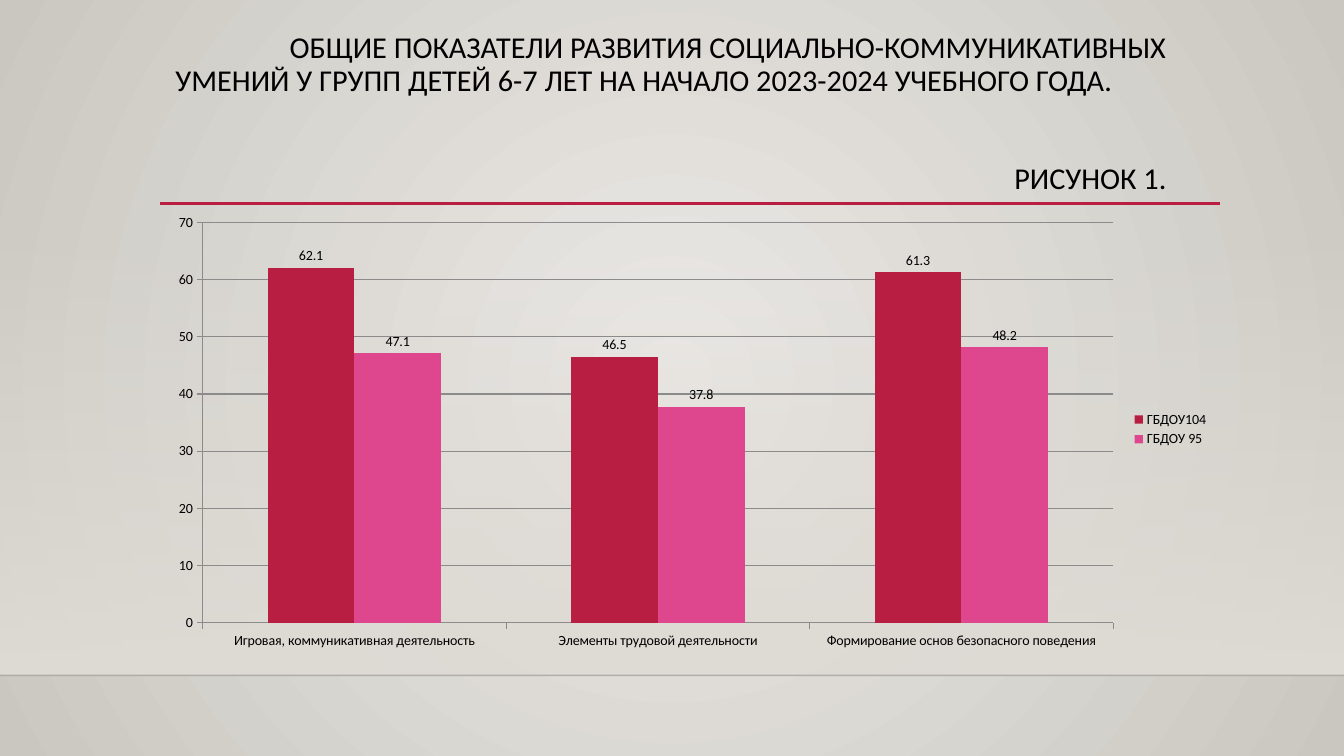
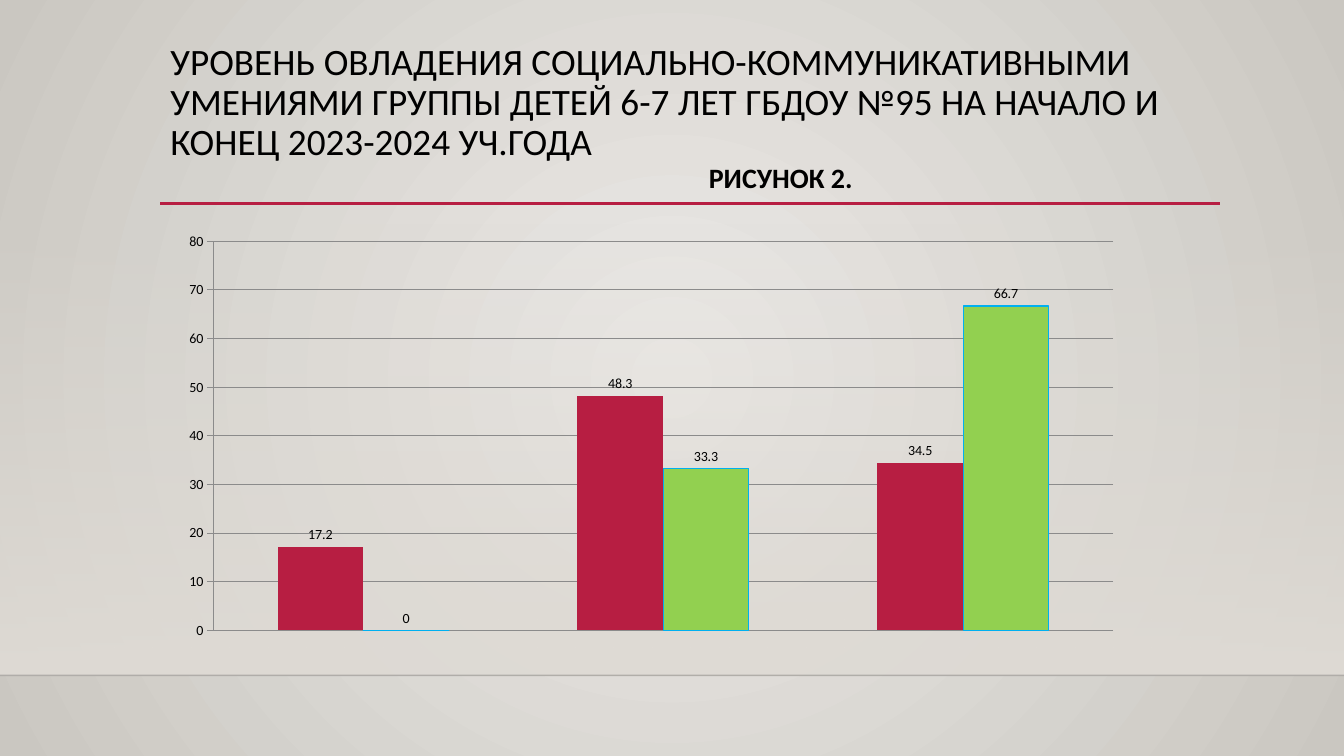
from dataclasses import dataclass
from typing import Optional

from pptx import Presentation
from pptx import util as u
from pptx.chart.data import CategoryChartData
from pptx.dml.color import RGBColor
from pptx.enum import chart as ch
from pptx.enum import shapes, text
from pptx.oxml import parse_xml
from pptx.oxml.ns import nsdecls


@dataclass(frozen=True)
class Theme:
    font: str = "Calibri"
    ink: str = "000000"
    hairline: str = "000001"
    accent: str = "B71E42"
    pink: str = "DE478E"
    green: str = "92D050"
    cyan: str = "00B0F0"
    grid: str = "8B8B8B"
    glow: str = "ECEAE7"
    edge: str = "CAC7C1"
    band: str = "DFDBD5"
    title_size: float = 21.6
    large_title_size: float = 26.6
    caption_size: float = 20
    chart_size: float = 10


@dataclass(frozen=True)
class Box:
    left: float
    top: float
    width: float
    height: float

    def lengths(self) -> tuple:
        return tuple(u.Inches(n) for n in (self.left, self.top, self.width, self.height))


@dataclass(frozen=True)
class TitleLine:
    text: str
    size: float
    align: text.PP_ALIGN = text.PP_ALIGN.LEFT
    indent: float = 0
    space_before: float = 0
    bold: bool = False


@dataclass(frozen=True)
class Series:
    name: str
    values: tuple
    fill: str
    outline: Optional[str] = None


@dataclass(frozen=True)
class ChartSlide:
    title_box: Box
    title: tuple
    chart_box: Box
    plot_area: Box
    categories: tuple
    series: tuple
    value_max: int
    labelled: bool


THEME = Theme()
WIDTH, HEIGHT = 13.33, 7.5
LEFT, CONTENT_WIDTH = 1.59, 10.5
BAND_TOP, BAND_BOTTOM = 2.21, 6.7
RULE_TOP, RULE_RIGHT = 2.02, 12.1

SLIDES = (
    ChartSlide(
        title_box=Box(LEFT, 0.27, 10.08, 1.76),
        title=(
            TitleLine("ОБЩИЕ ПОКАЗАТЕЛИ РАЗВИТИЯ СОЦИАЛЬНО-КОММУНИКАТИВНЫХ",
                      THEME.title_size, text.PP_ALIGN.RIGHT),
            TitleLine("УМЕНИЙ У ГРУПП ДЕТЕЙ 6-7 ЛЕТ НА НАЧАЛО 2023-2024 УЧЕБНОГО ГОДА.",
                      THEME.title_size, indent=0.05),
            TitleLine("РИСУНОК 1.", THEME.title_size, text.PP_ALIGN.RIGHT, space_before=47),
        ),
        chart_box=Box(LEFT, 2.03, CONTENT_WIDTH, 4.46),
        plot_area=Box(0.04, 0.04, 0.86, 0.89),
        categories=("Игровая, коммуникативная деятельность",
                    "Элементы трудовой деятельности",
                    "Формирование основ безопасного поведения"),
        series=(
            Series("ГБДОУ104", (62.1, 46.5, 61.3), THEME.accent),
            Series("ГБДОУ 95", (47.1, 37.8, 48.2), THEME.pink),
        ),
        value_max=70,
        labelled=True,
    ),
    ChartSlide(
        title_box=Box(LEFT, 0.38, CONTENT_WIDTH, 1.65),
        title=(
            TitleLine("УРОВЕНЬ ОВЛАДЕНИЯ СОЦИАЛЬНО-КОММУНИКАТИВНЫМИ УМЕНИЯМИ ГРУППЫ "
                      "ДЕТЕЙ 6-7 ЛЕТ ГБДОУ №95 НА НАЧАЛО И КОНЕЦ 2023-2024 УЧ.ГОДА",
                      THEME.large_title_size),
            TitleLine("РИСУНОК 2.", THEME.caption_size, indent=5.34, bold=True),
        ),
        chart_box=Box(LEFT, 2.17, CONTENT_WIDTH, 4.49),
        plot_area=Box(0.05, 0.05, 0.85, 0.86),
        categories=("1", "2", "3"),
        series=(
            Series("Series 1", (17.2, 48.3, 34.5), THEME.accent),
            Series("Series 2", (0, 33.3, 66.7), THEME.green, THEME.cyan),
        ),
        value_max=80,
        labelled=False,
    ),
)


def color(value: str) -> RGBColor:
    return RGBColor.from_string(value)


def fill_gradient(fill, start: str, end: str) -> None:
    fill.gradient()
    for stop, value in zip(fill.gradient_stops, (start, end)):
        stop.color.rgb = color(value)


def set_alpha(element, percent: int) -> None:
    first = element.xpath(".//a:srgbClr")[0]
    first.append(parse_xml(f'<a:alpha {nsdecls("a")} val="{percent * 1000}"/>'))


def set_background(master) -> None:
    fill_gradient(master.background.fill, THEME.glow, THEME.edge)
    linear = master.element.xpath(".//p:bgPr//a:lin")[0]
    linear.getparent().replace(linear, parse_xml(
        f'<a:path {nsdecls("a")} path="circle">'
        '<a:fillToRect l="50000" t="50000" r="50000" b="50000"/></a:path>'))


def add_rule(page, left: float, right: float, top: float, value: str, weight: float):
    rule = page.shapes.add_connector(
        shapes.MSO_CONNECTOR.STRAIGHT,
        u.Inches(left), u.Inches(top), u.Inches(right), u.Inches(top))
    rule.line.color.rgb = color(value)
    rule.line.width = u.Pt(weight)
    rule.element.spPr.append(parse_xml(f'<a:effectLst {nsdecls("a")}/>'))
    return rule


def add_decor(page) -> None:
    band_box = Box(0, BAND_TOP, WIDTH, BAND_BOTTOM - BAND_TOP)
    band = page.shapes.add_shape(shapes.MSO_SHAPE.RECTANGLE, *band_box.lengths())
    band.shadow.inherit = False
    band.line.fill.background()
    fill_gradient(band.fill, THEME.band, THEME.band)
    band.fill.gradient_angle = 270
    set_alpha(band.element, 0)
    floor = add_rule(page, 0, WIDTH, BAND_BOTTOM, THEME.hairline, 1)
    set_alpha(floor.element, 20)
    add_rule(page, LEFT, RULE_RIGHT, RULE_TOP, THEME.accent, 2.5)


def fill_title(page, box: Box, lines: tuple) -> None:
    title = page.shapes.title
    title.left, title.top, title.width, title.height = box.lengths()
    frame = title.text_frame
    frame.auto_size = text.MSO_AUTO_SIZE.NONE
    frame.vertical_anchor = text.MSO_ANCHOR.TOP
    frame.text = "\n".join(line.text for line in lines)
    for para, line in zip(frame.paragraphs, lines):
        para.alignment = line.align
        para.line_spacing = 0.9
        para.space_before = u.Pt(line.space_before)
        properties = para._p.get_or_add_pPr()
        properties.set("marL", str(u.Inches(line.indent)))
        properties.set("indent", "0")
        for span in para.runs:
            span.font.name = THEME.font
            span.font.size = u.Pt(line.size)
            span.font.bold = line.bold
            span.font.color.rgb = color(THEME.ink)


def set_font(font) -> None:
    font.name = THEME.font
    font.size = u.Pt(THEME.chart_size)
    font.color.rgb = color(THEME.ink)


def set_plot_area(chart, area: Box) -> None:
    plot_area = chart.element.xpath(".//c:plotArea")[0]
    for old in plot_area.xpath("./c:layout"):
        plot_area.remove(old)
    plot_area.insert(0, parse_xml(
        f'<c:layout {nsdecls("c")}><c:manualLayout><c:layoutTarget val="inner"/>'
        '<c:xMode val="edge"/><c:yMode val="edge"/>'
        f'<c:x val="{area.left}"/><c:y val="{area.top}"/>'
        f'<c:w val="{area.width}"/><c:h val="{area.height}"/>'
        '</c:manualLayout></c:layout>'))


def style_axes(chart, value_max: int, labelled: bool) -> None:
    values, categories = chart.value_axis, chart.category_axis
    values.minimum_scale, values.maximum_scale, values.major_unit = 0, value_max, 10
    values.has_major_gridlines = True
    categories.visible = labelled
    for axis in (values, categories):
        axis.major_tick_mark = ch.XL_TICK_MARK.OUTSIDE
        set_font(axis.tick_labels.font)
    for line in (values.format.line, categories.format.line, values.major_gridlines.format.line):
        line.color.rgb = color(THEME.grid)
        line.width = u.Pt(0.75)


def add_column_chart(page, content: ChartSlide) -> None:
    data = CategoryChartData()
    data.categories = content.categories
    for series in content.series:
        data.add_series(series.name, series.values)
    chart = page.shapes.add_chart(
        ch.XL_CHART_TYPE.COLUMN_CLUSTERED, *content.chart_box.lengths(), data).chart
    set_font(chart.font)
    chart.has_title = False
    chart.has_legend = content.labelled
    if content.labelled:
        chart.legend.position = ch.XL_LEGEND_POSITION.RIGHT
        chart.legend.include_in_layout = False
        set_font(chart.legend.font)
    style_axes(chart, content.value_max, content.labelled)
    set_plot_area(chart, content.plot_area)
    plot = chart.plots[0]
    plot.vary_by_categories = False
    plot.gap_width, plot.overlap = 150, 0
    for bars, series in zip(plot.series, content.series):
        bars.format.fill.solid()
        bars.format.fill.fore_color.rgb = color(series.fill)
        if series.outline:
            bars.format.line.color.rgb = color(series.outline)
            bars.format.line.width = u.Pt(0.75)
        labels = bars.data_labels
        labels.show_value = True
        labels.position = ch.XL_LABEL_POSITION.OUTSIDE_END
        set_font(labels.font)


def main() -> None:
    deck = Presentation()
    deck.slide_width, deck.slide_height = u.Inches(WIDTH), u.Inches(HEIGHT)
    set_background(deck.slide_master)
    for content in SLIDES:
        page = deck.slides.add_slide(deck.slide_layouts[5])
        add_decor(page)
        fill_title(page, content.title_box, content.title)
        add_column_chart(page, content)
    deck.save("out.pptx")


if __name__ == "__main__":
    main()
